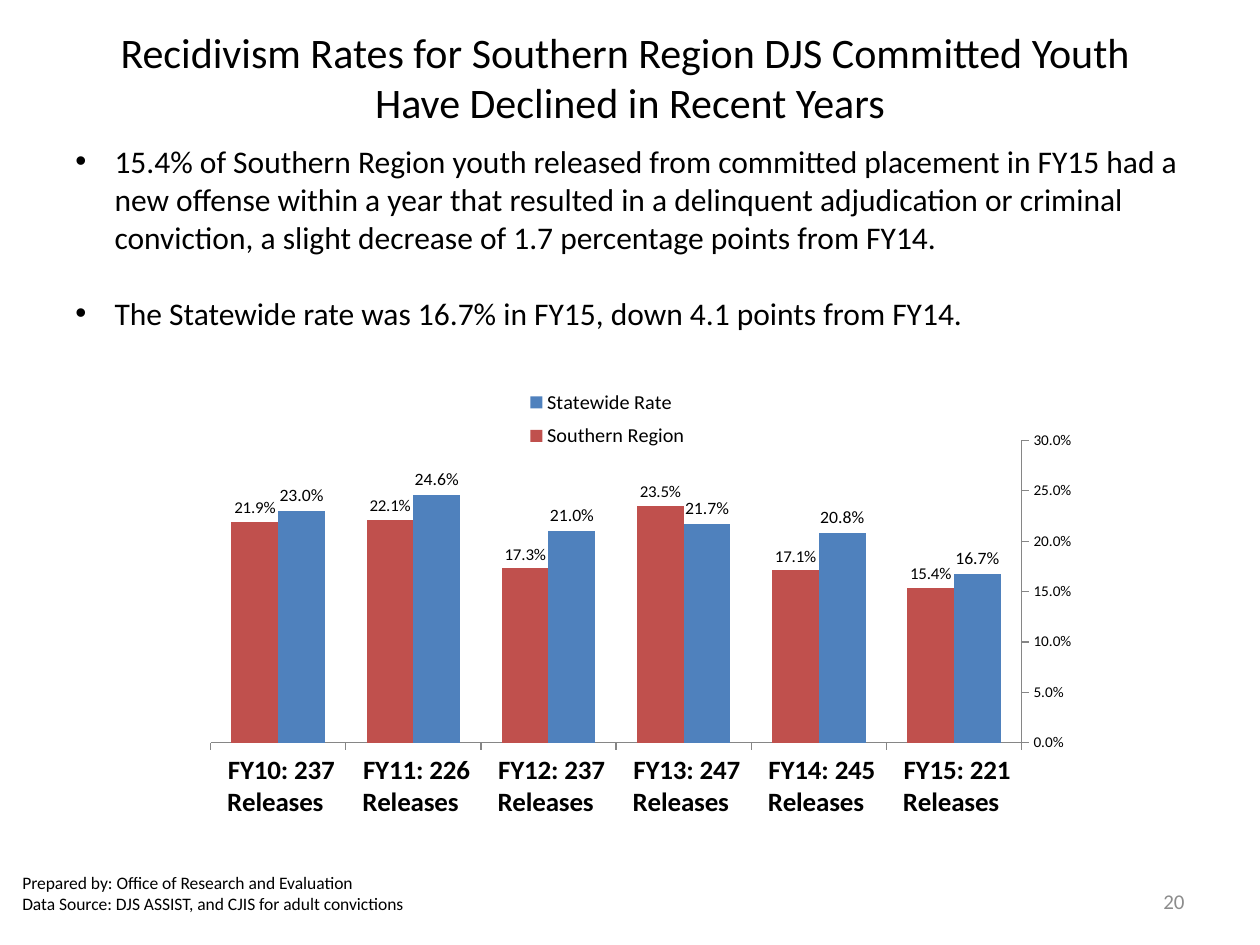
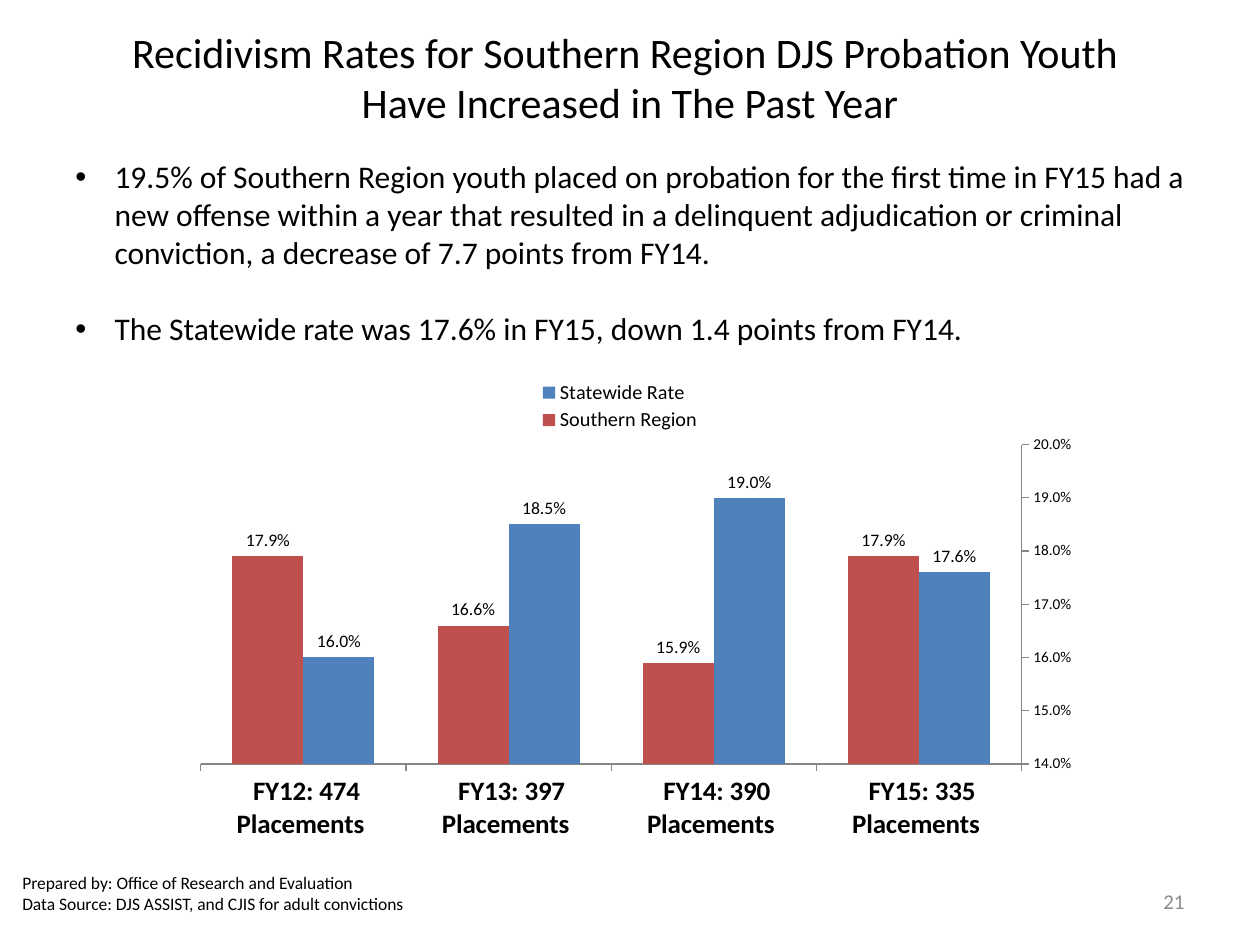
import dataclasses

import lxml.etree
import pptx
import pptx.chart.data
import pptx.dml.color
import pptx.enum.chart
import pptx.enum.text
import pptx.oxml.ns
import pptx.util

Cm = pptx.util.Cm
Pt = pptx.util.Pt
qn = pptx.oxml.ns.qn
Align = pptx.enum.text.PP_ALIGN

FONT = "Calibri"
BLACK = "000000"
GREY = "8C8C8C"
AXIS_GREY = "868686"
STATEWIDE_BLUE = "4F81BD"
REGION_RED = "C0504D"
PERCENT = "0.0%"
FOOTER = [
    "Prepared by: Office of Research and Evaluation",
    "Data Source: DJS ASSIST, and CJIS for adult convictions",
]


@dataclasses.dataclass
class Area:
    left: float
    top: float
    width: float
    height: float

    def lengths(self) -> list[int]:
        return [Cm(value) for value in (self.left, self.top, self.width, self.height)]


@dataclasses.dataclass
class TextStyle:
    size: float
    color: str = BLACK
    align: Align = Align.LEFT


@dataclasses.dataclass
class RateSeries:
    name: str
    color: str
    values: list[float]
    label_size: float = 10.5


@dataclasses.dataclass
class RateChart:
    area: Area
    legend: Area
    categories: list[str]
    series: list[RateSeries]
    minimum: float
    maximum: float
    step: float


@dataclasses.dataclass
class RatePage:
    number: int
    title: str
    points: list[str]
    points_top: float
    chart: RateChart


TITLE_AREA = Area(0, 0.76, 25.4, 1.57)
NUMBER_AREA = Area(18.21, 17.65, 5.92, 1.02)
FOOTER_AREA = Area(0.2, 17.35, 8.69, 1.32)
PLOT_SHARE = Area(0.06, 0.17, 0.92, 0.71)

TITLE_STYLE = TextStyle(24, align=Align.CENTER)
POINT_STYLE = TextStyle(18)
NUMBER_STYLE = TextStyle(12, GREY, Align.RIGHT)
FOOTER_STYLE = TextStyle(10)

PAGES = [
    RatePage(
        20,
        "Recidivism Rates for Southern Region DJS Committed Youth \vHave Declined in Recent Years",
        [
            "15.4% of Southern Region youth released from committed placement in FY15 had a "
            "new offense within a year that resulted in a delinquent adjudication or criminal "
            "conviction, a slight decrease of 1.7 percentage points from FY14.",
            "The Statewide rate was 16.7% in FY15, down 4.1 points from FY14.",
        ],
        2.97,
        RateChart(
            Area(3.18, 7.42, 18.42, 9.09),
            Area(0.41, 0.03, 0.2, 0.18),
            [
                f" FY{year}: {count} Releases "
                for year, count in zip(range(15, 9, -1), (221, 245, 247, 237, 226, 237))
            ],
            [
                RateSeries("Statewide Rate", STATEWIDE_BLUE,
                           [0.167, 0.208, 0.217, 0.21, 0.246, 0.23]),
                RateSeries("Southern Region", REGION_RED,
                           [0.154, 0.171, 0.235, 0.173, 0.221, 0.219], 10),
            ],
            0, 0.3, 0.05,
        ),
    ),
    RatePage(
        21,
        "Recidivism Rates for Southern Region DJS Probation Youth \vHave Increased in The Past Year",
        [
            "19.5% of Southern Region youth placed on probation for the first time in FY15 had a "
            "new offense within a year that resulted in a delinquent adjudication or criminal "
            "conviction, a decrease of 7.7 points from FY14.",
            "The Statewide rate was 17.6% in FY15, down 1.4 points from FY14.",
        ],
        3.28,
        RateChart(
            Area(2.97, 7.42, 18.63, 9.53),
            Area(0.43, 0.02, 0.2, 0.13),
            [
                f" FY{year}: {count} Placements "
                for year, count in zip(range(15, 11, -1), (335, 390, 397, 474))
            ],
            [
                RateSeries("Statewide Rate", STATEWIDE_BLUE, [0.176, 0.19, 0.185, 0.16]),
                RateSeries("Southern Region", REGION_RED, [0.179, 0.159, 0.166, 0.179]),
            ],
            0.14, 0.2, 0.01,
        ),
    ),
]


def rgb(color: str) -> pptx.dml.color.RGBColor:
    return pptx.dml.color.RGBColor.from_string(color)


def style_font(font, size: float, color: str = BLACK, bold: bool = False) -> None:
    font.name = FONT
    font.size = Pt(size)
    font.bold = bold
    font.color.rgb = rgb(color)


def add_text(page, area: Area, lines: list[str], style: TextStyle) -> list:
    frame = page.shapes.add_textbox(*area.lengths()).text_frame
    frame.word_wrap = True
    frame.vertical_anchor = pptx.enum.text.MSO_ANCHOR.MIDDLE
    frame.text = "\n".join(lines)
    for para in frame.paragraphs:
        para.alignment = style.align
        for span in para.runs:
            style_font(span.font, style.size, style.color)
    return list(frame.paragraphs)


def add_points(page, area: Area, points: list[str]) -> None:
    paras = add_text(page, area, points, POINT_STYLE)
    for para in paras:
        properties = para._p.get_or_add_pPr()
        properties.set("marL", str(Cm(0.79)))
        properties.set("indent", str(-Cm(0.79)))
    for para in paras[1:]:
        para.space_before = Pt(21.9)
    for para in paras:
        properties = para._p.get_or_add_pPr()
        lxml.etree.SubElement(properties, qn("a:buFont"), typeface="Arial")
        lxml.etree.SubElement(properties, qn("a:buChar"), char="•")


def set_layout(parent, position: int, share: Area, inner: bool = False) -> None:
    for old_layout in parent.findall(qn("c:layout")):
        parent.remove(old_layout)
    layout = lxml.etree.Element(qn("c:layout"))
    manual = lxml.etree.SubElement(layout, qn("c:manualLayout"))
    settings = {"layoutTarget": "inner"} if inner else {}
    settings |= {"xMode": "edge", "yMode": "edge", "x": share.left, "y": share.top,
                 "w": share.width, "h": share.height}
    for name, value in settings.items():
        lxml.etree.SubElement(manual, qn(f"c:{name}"), val=str(value))
    parent.insert(position, layout)


def style_axis(axis, size: float, bold: bool = False) -> None:
    axis.has_major_gridlines = False
    axis.major_tick_mark = pptx.enum.chart.XL_TICK_MARK.OUTSIDE
    axis.minor_tick_mark = pptx.enum.chart.XL_TICK_MARK.NONE
    axis.format.line.color.rgb = rgb(AXIS_GREY)
    axis.format.line.width = Pt(0.75)
    style_font(axis.tick_labels.font, size, bold=bold)


def add_rate_chart(page, rates: RateChart) -> None:
    data = pptx.chart.data.CategoryChartData(number_format=PERCENT)
    data.categories = rates.categories
    for series in rates.series:
        data.add_series(series.name, series.values)
    kind = pptx.enum.chart.XL_CHART_TYPE.COLUMN_CLUSTERED
    chart = page.shapes.add_chart(kind, *rates.area.lengths(), data).chart
    style_font(chart.font, 10)
    chart.has_title = False

    plot = chart.plots[0]
    plot.gap_width = 89
    plot.vary_by_categories = False
    for drawn, series in zip(plot.series, rates.series):
        drawn.format.fill.solid()
        drawn.format.fill.fore_color.rgb = rgb(series.color)
        labels = drawn.data_labels
        labels.show_value = True
        labels.position = pptx.enum.chart.XL_LABEL_POSITION.OUTSIDE_END
        labels.number_format = PERCENT
        labels.number_format_is_linked = False
        style_font(labels.font, series.label_size)

    style_axis(chart.category_axis, 16, bold=True)
    chart.category_axis.reverse_order = True
    chart.category_axis.crosses = pptx.enum.chart.XL_AXIS_CROSSES.MAXIMUM
    value_axis = chart.value_axis
    style_axis(value_axis, 9)
    value_axis.minimum_scale = rates.minimum
    value_axis.maximum_scale = rates.maximum
    value_axis.major_unit = rates.step
    value_axis.tick_labels.number_format = PERCENT
    value_axis.tick_labels.number_format_is_linked = False

    chart.has_legend = True
    chart.legend.position = pptx.enum.chart.XL_LEGEND_POSITION.RIGHT
    chart.legend.include_in_layout = False
    style_font(chart.legend.font, 12)
    set_layout(chart.legend._element, 1, rates.legend)
    set_layout(chart._chartSpace.chart.plotArea, 0, PLOT_SHARE, inner=True)


def add_rate_page(deck, content: RatePage) -> None:
    page = deck.slides.add_slide(deck.slide_layouts[6])
    add_text(page, TITLE_AREA, [content.title], TITLE_STYLE)
    add_points(page, Area(1.27, content.points_top, 23.06, 3.61), content.points)
    add_text(page, NUMBER_AREA, [str(content.number)], NUMBER_STYLE)
    add_text(page, FOOTER_AREA, FOOTER, FOOTER_STYLE)
    add_rate_chart(page, content.chart)


def main() -> None:
    deck = pptx.Presentation()
    deck.slide_width = Cm(25.4)
    deck.slide_height = Cm(19.05)
    for content in PAGES:
        add_rate_page(deck, content)
    deck.save("out.pptx")


if __name__ == "__main__":
    main()
